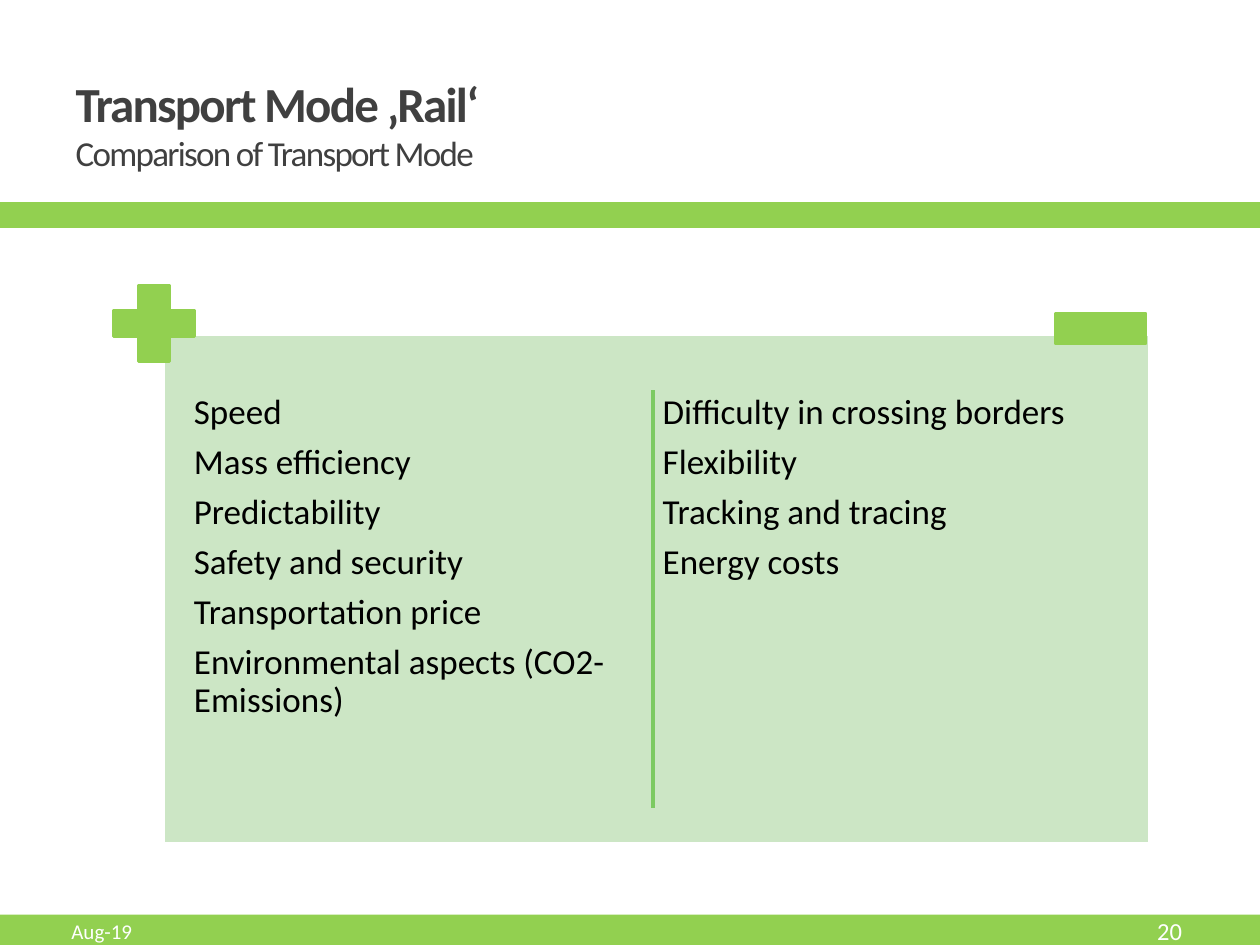
from lxml import etree
from pptx import Presentation
from pptx.dml.color import RGBColor
from pptx.enum.shapes import MSO_CONNECTOR, MSO_SHAPE
from pptx.enum.text import MSO_ANCHOR, MSO_AUTO_SIZE, PP_ALIGN
from pptx.oxml.ns import qn
from pptx.util import Cm, Pt

GREEN = RGBColor(0x92, 0xD0, 0x50)
DIVIDER_GREEN = RGBColor(0x7C, 0xCA, 0x62)
PALE_GREEN = RGBColor(0xCC, 0xE6, 0xC5)
DARK_GREY = RGBColor(0x40, 0x40, 0x40)
BLACK = RGBColor(0, 0, 0)
WHITE = RGBColor(0xFF, 0xFF, 0xFF)
LINE_WIDTH = Pt(2.08)

presentation = Presentation()
presentation.slide_width, presentation.slide_height = Cm(25.4), Cm(19.05)
slide = presentation.slides.add_slide(presentation.slide_layouts[5])


def add_block(kind, left, top, width, height, fill, line=None):
    """Add a filled shape, lengths in cm; without a line colour it has no outline."""
    shape = slide.shapes.add_shape(kind, Cm(left), Cm(top), Cm(width), Cm(height))
    shape.shadow.inherit = False
    shape.fill.solid()
    shape.fill.fore_color.rgb = fill
    if line is None:
        shape.line.fill.background()
    else:
        shape.line.color.rgb = line
        shape.line.width = LINE_WIDTH
    return shape


def add_run(paragraph, text, size, color, bold=False):
    run = paragraph.add_run()
    run.text = text
    run.font.name = "Calibri"
    run.font.size = Pt(size)
    run.font.bold = bold
    run.font.color.rgb = color
    return run


# Header and footer bands
add_block(MSO_SHAPE.RECTANGLE, -0.1, 18.44, 25.8, 1.27, GREEN)
add_block(MSO_SHAPE.RECTANGLE, 0, 4.11, 25.7, 0.46, GREEN, GREEN)

# Title with subtitle line
title = slide.shapes.title
title.left, title.top, title.width, title.height = Cm(1.27), Cm(1.12), Cm(13.23), Cm(2.74)
title.text_frame.auto_size = MSO_AUTO_SIZE.NONE
title.text_frame.vertical_anchor = MSO_ANCHOR.MIDDLE
paragraph = title.text_frame.paragraphs[0]
paragraph.alignment = PP_ALIGN.LEFT
heading = add_run(paragraph, "Transport Mode ‚Rail‘", 28, DARK_GREY, bold=True)
paragraph.add_line_break()
subheading = add_run(paragraph, "Comparison of Transport Mode", 20, DARK_GREY)
for run in (heading, subheading):
    run.font._element.set("spc", "-100")

# Panel with advantages on the left and drawbacks on the right
add_block(MSO_SHAPE.RECTANGLE, 3.3, 6.73, 19.89, 10.29, PALE_GREEN, WHITE)
columns = [
    (3.81, ["Speed", "Mass efficiency", "Predictability", "Safety and security",
            "Transportation price", "Environmental aspects (CO2-Emissions)"]),
    (13.26, ["Difficulty in crossing borders", "Flexibility",
             "Tracking and tracing", "Energy costs"]),
]
for left, points in columns:
    frame = slide.shapes.add_textbox(Cm(left), Cm(7.85), Cm(9.25), Cm(8.79)).text_frame
    frame.word_wrap = True
    frame.margin_left = frame.margin_right = Cm(0.1)
    frame.margin_top = frame.margin_bottom = Cm(0.1)
    for index, point in enumerate(points):
        paragraph = frame.add_paragraph() if index else frame.paragraphs[0]
        paragraph.line_spacing = 0.9
        paragraph.space_after = Pt(7)
        add_run(paragraph, point, 20, BLACK)

plus = add_block(MSO_SHAPE.CROSS, 2.29, 5.77, 1.63, 1.52, GREEN, GREEN)
plus.adjustments[0] = 0.33
add_block(MSO_SHAPE.RECTANGLE, 21.29, 6.32, 1.8, 0.61, GREEN, GREEN)

divider = slide.shapes.add_connector(
    MSO_CONNECTOR.STRAIGHT, Cm(13.16), Cm(7.87), Cm(13.16), Cm(16.28))
divider.line.color.rgb = DIVIDER_GREEN
divider.line.width = LINE_WIDTH
etree.SubElement(divider._element.spPr, qn("a:effectLst"))

# Date and slide number
for left, width, text, size, alignment in [
    (1.19, 8.05, "Aug-19", 12, PP_ALIGN.LEFT),
    (21.11, 2.97, "20", 14, PP_ALIGN.RIGHT),
]:
    frame = slide.shapes.add_textbox(Cm(left), Cm(18.31), Cm(width), Cm(0.91)).text_frame
    frame.word_wrap = True
    frame.vertical_anchor = MSO_ANCHOR.MIDDLE
    frame.paragraphs[0].alignment = alignment
    add_run(frame.paragraphs[0], text, size, WHITE)

presentation.save("out.pptx")
